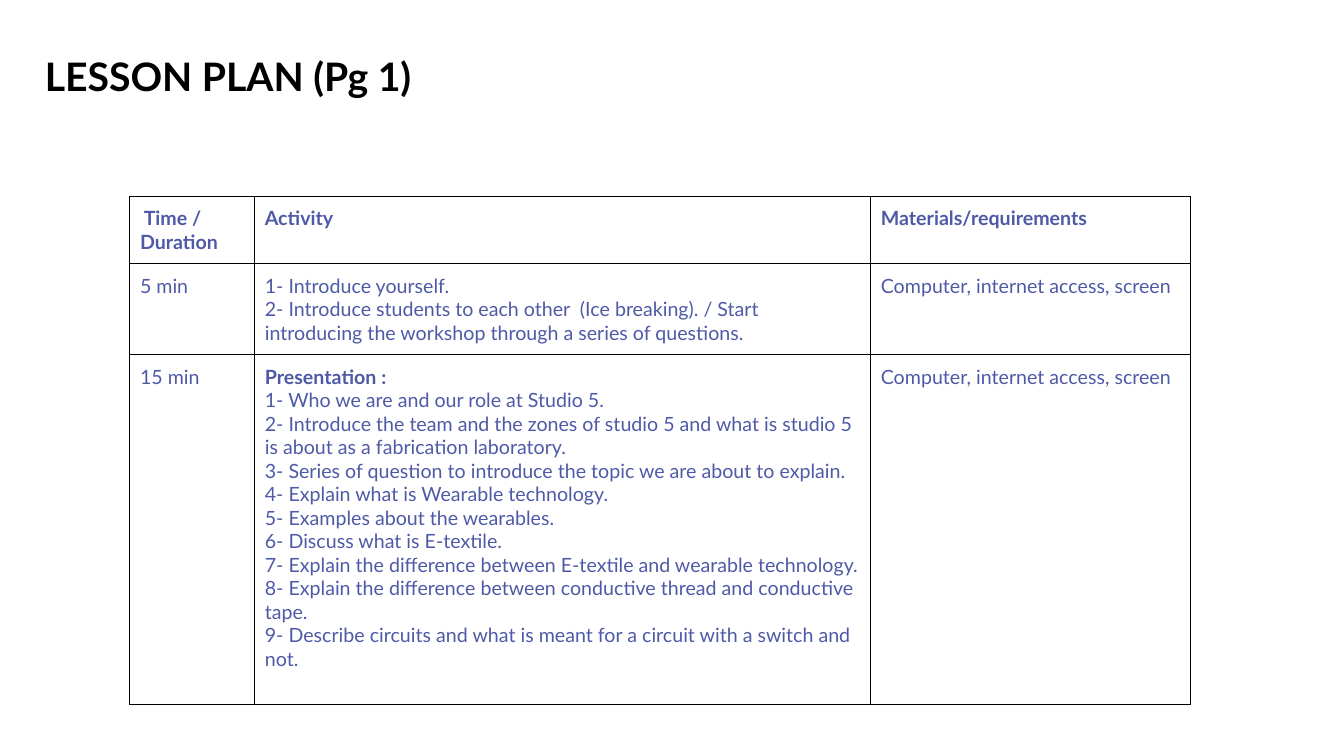
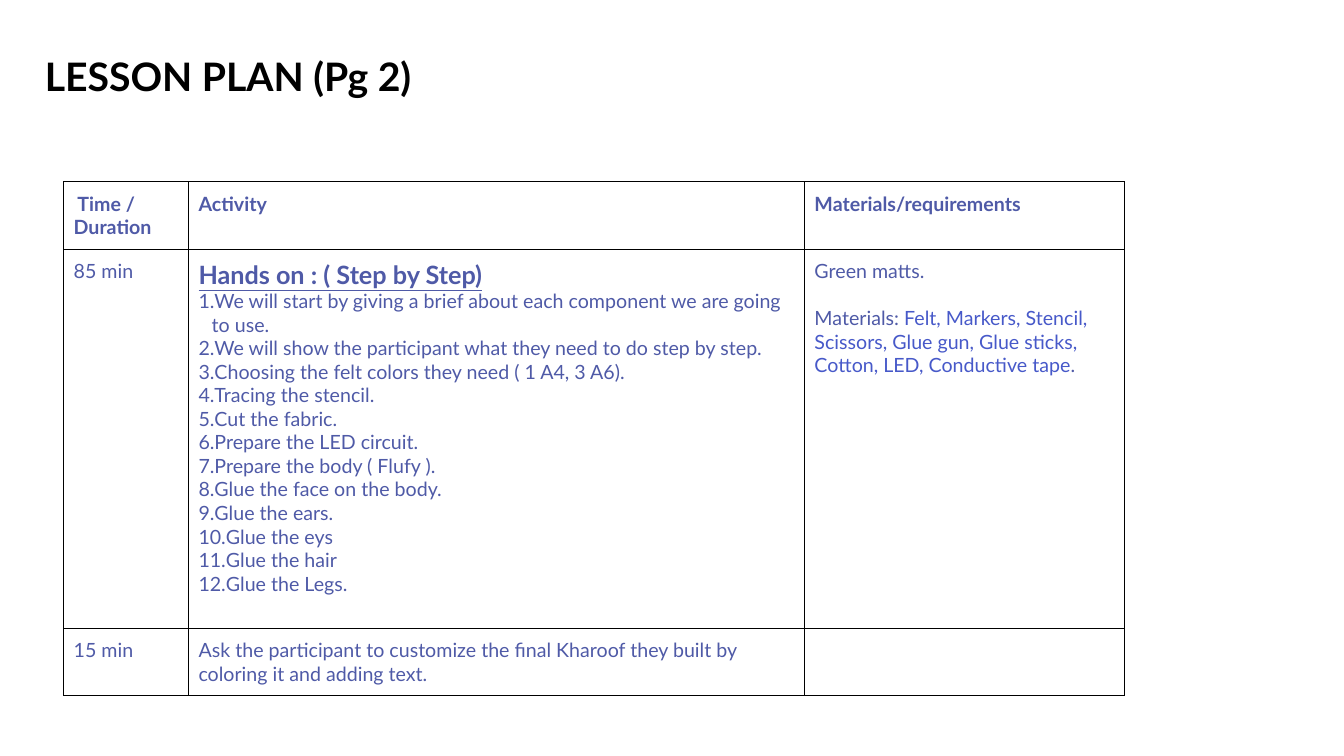
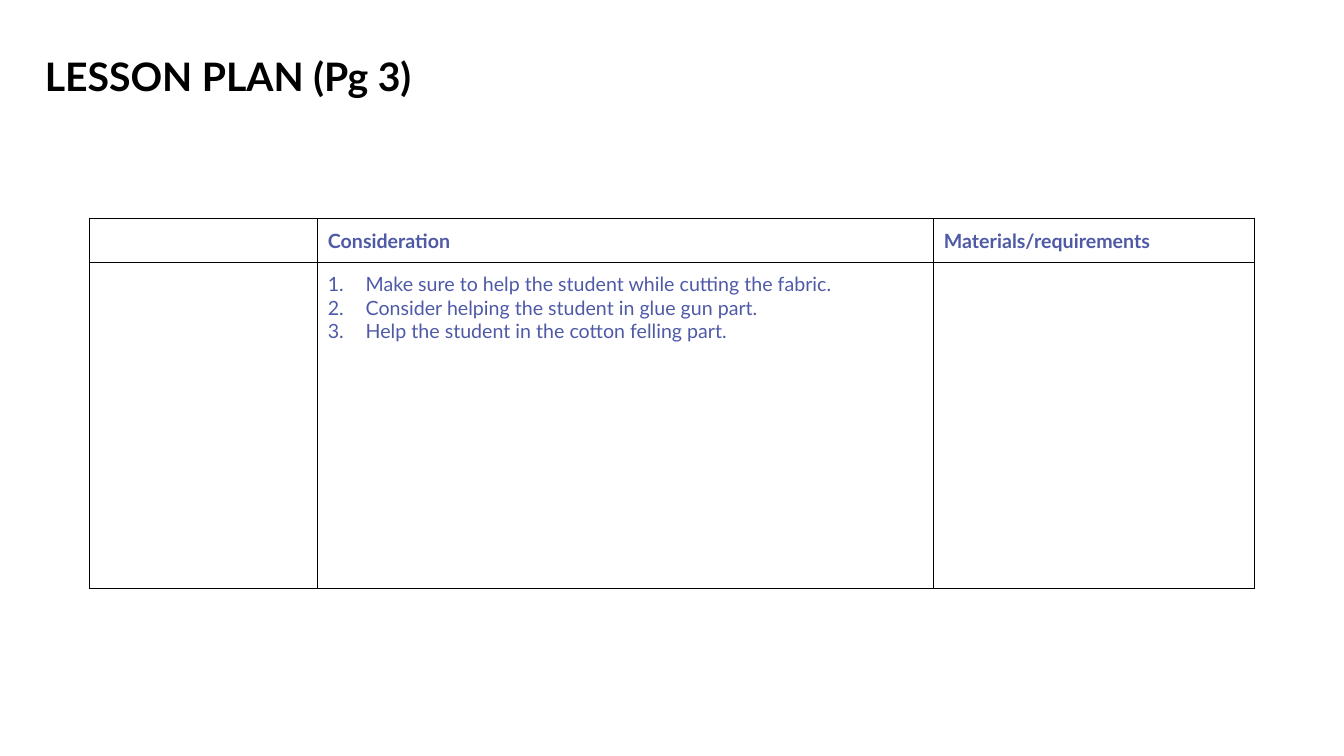
from dataclasses import dataclass

from lxml.etree import SubElement
from pptx import Presentation
from pptx.dml.color import RGBColor
from pptx.enum.text import MSO_ANCHOR, PP_ALIGN
from pptx.oxml.ns import qn
from pptx.util import Pt


@dataclass(frozen=True)
class Theme:
    font: str = "Lato"
    title_color: RGBColor = RGBColor(0, 0, 0)
    text_color: RGBColor = RGBColor(0x4F, 0x5A, 0xA7)
    accent_color: RGBColor = RGBColor(0x47, 0x59, 0xC9)
    border_color: str = "000000"
    border_width: float = 0.75
    title_size: float = 28
    heading_size: float = 18
    text_size: float = 14
    cell_margin: float = 7.2


@dataclass(frozen=True)
class Line:
    """One paragraph of a cell; accent and tail follow text as runs of their own."""
    text: str
    accent: str = ""
    tail: str = ""
    bold: bool = False
    underline: bool = False
    size: float = Theme.text_size
    margin: float = 0
    indent: float = 0
    numbered: bool = False
    space_before: float = 0


@dataclass(frozen=True)
class Page:
    left: float
    top: float
    first_column: float
    row_heights: tuple
    rows: list


def numbered_lines(margin, texts):
    return [Line(text, margin=margin, indent=-margin, numbered=True) for text in texts]


def draw_borders(cell):
    properties = cell._tc.get_or_add_tcPr()
    for side in ("lnL", "lnR", "lnT", "lnB"):
        border = SubElement(properties, qn(f"a:{side}"), w=str(Pt(theme.border_width)))
        fill = SubElement(border, qn("a:solidFill"))
        SubElement(fill, qn("a:srgbClr"), val=theme.border_color)


theme = Theme()
ACTIVITY_WIDTH, MATERIALS_WIDTH = 440, 228.7
TIME_WIDTH = 89.2

time_header = [Line("Time / Duration", bold=True, indent=2.7)]
activity_header = [Line("Activity", bold=True)]
materials_header = [Line("Materials/requirements", bold=True)]
plan_header = [time_header, activity_header, materials_header]
computer = [Line("Computer, internet access, screen")]

introduction = [
    Line("1- Introduce yourself."),
    Line("2- Introduce students to each other  (Ice breaking). / Start introducing "
         "the workshop through a series of questions."),
]
presentation_steps = [Line("Presentation :", bold=True)] + [Line(text) for text in (
    "1- Who we are and our role at Studio 5.",
    "2- Introduce the team and the zones of studio 5 and what is studio 5 is about "
    "as a fabrication laboratory.",
    "3- Series of question to introduce the topic we are about to explain.",
    "4- Explain what is Wearable technology.",
    "5- Examples about the wearables.",
    "6- Discuss what is E-textile.",
    "7- Explain the difference between E-textile and wearable technology.",
    "8- Explain the difference between conductive thread and conductive tape.",
    "9- Describe circuits and what is meant for a circuit with a switch and not.",
)]
hands_on_steps = [
    Line("Hands on : ( Step by Step)", bold=True, underline=True, size=theme.heading_size),
] + numbered_lines(9.4, (
    "We will start by giving a brief about each component we are going to use.",
    "We will show the participant what they need to do step by step.",
    "Choosing the felt colors they need ( 1 A4, 3 A6).",
    "Tracing the stencil.",
    "Cut the fabric.",
    "Prepare the LED circuit.",
    "Prepare the body ( Flufy ).",
    "Glue the face on the body.",
    "Glue the ears.",
    "Glue the eys",
    "Glue the hair",
    "Glue the Legs.",
))
hands_on_materials = [
    Line("Green matts."),
    Line("Materials: ",
         accent="Felt, Markers, Stencil, Scissors, Glue gun, Glue sticks, Cotton, LED, "
                "Conductive tape",
         tail=".", space_before=16.8),
]
customizing = [Line("Ask the participant to customize the final Kharoof they built by "
                    "coloring it and adding text.")]
considerations = numbered_lines(27, (
    "Make sure to help the student while cutting the fabric.",
    "Consider helping the student in glue gun part.",
    "Help the student in the cotton felling part.",
))

pages = [
    Page(92.8, 140.3, TIME_WIDTH, (48.2, 64.8, 249.6), [
        plan_header,
        [[Line("5 min")], introduction, computer],
        [[Line("15 min")], presentation_steps, computer],
    ]),
    Page(45.4, 129.7, TIME_WIDTH, (48.2, 271, 48.2), [
        plan_header,
        [[Line("85 min")], hands_on_steps, hands_on_materials],
        [[Line("15 min")], customizing, []],
    ]),
    Page(64, 156.2, 163, (31.2, 232.8), [
        [[], [Line("Consideration", bold=True)], materials_header],
        [[], considerations, []],
    ]),
]

presentation = Presentation()
presentation.slide_width, presentation.slide_height = Pt(960), Pt(540)
layout = presentation.slide_layouts.get_by_name("Title Only")
layout_title = layout.placeholders[0]
layout_title.left, layout_title.top = Pt(19.4), Pt(33.8)
layout_title.width, layout_title.height = Pt(636), Pt(41)

for number, page in enumerate(pages, 1):
    slide = presentation.slides.add_slide(layout)
    title_frame = slide.shapes.title.text_frame
    title_frame.text = f"LESSON PLAN (Pg {number})"
    title_frame.vertical_anchor = MSO_ANCHOR.MIDDLE
    title_frame.margin_left = Pt(12.6)
    title = title_frame.paragraphs[0]
    title.alignment = PP_ALIGN.LEFT
    title.font.name = theme.font
    title.font.size = Pt(theme.title_size)
    title.font.bold = True
    title.font.color.rgb = theme.title_color

    widths = (page.first_column, ACTIVITY_WIDTH, MATERIALS_WIDTH)
    table = slide.shapes.add_table(
        len(page.rows), len(widths), Pt(page.left), Pt(page.top),
        Pt(sum(widths)), Pt(sum(page.row_heights))).table
    table.first_row = table.horz_banding = False
    for column, width in zip(table.columns, widths):
        column.width = Pt(width)

    for row, height, contents in zip(table.rows, page.row_heights, page.rows):
        row.height = Pt(height)
        for cell, lines in zip(row.cells, contents):
            draw_borders(cell)
            cell.fill.background()
            if not lines:
                continue
            cell.margin_left = cell.margin_right = Pt(theme.cell_margin)
            cell.margin_top = cell.margin_bottom = Pt(theme.cell_margin)
            cell.text_frame.text = "\n".join(line.text for line in lines)
            for paragraph, line in zip(cell.text_frame.paragraphs, lines):
                properties = paragraph._p.get_or_add_pPr()
                properties.set("marL", str(Pt(line.margin)))
                properties.set("indent", str(Pt(line.indent)))
                if line.numbered:
                    SubElement(properties, qn("a:buAutoNum"), type="arabicPeriod")
                if line.space_before:
                    paragraph.space_before = Pt(line.space_before)
                paragraph.font.name = theme.font
                paragraph.font.size = Pt(line.size)
                paragraph.font.bold = line.bold
                paragraph.font.underline = line.underline
                paragraph.font.color.rgb = theme.text_color
                if line.accent:
                    accent = paragraph.add_run()
                    accent.text = line.accent
                    accent.font.color.rgb = theme.accent_color
                    paragraph.add_run().text = line.tail

presentation.save("out.pptx")
